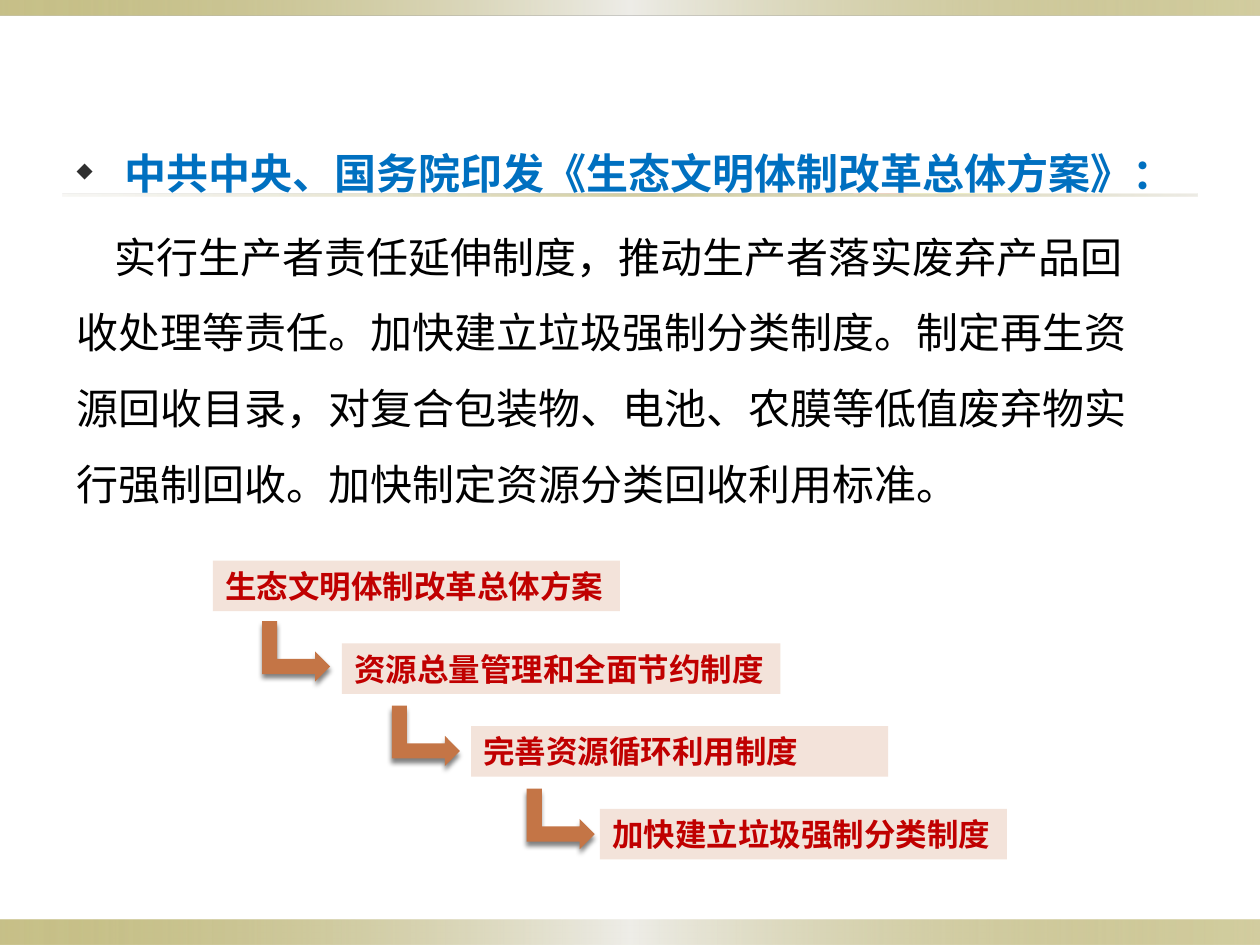
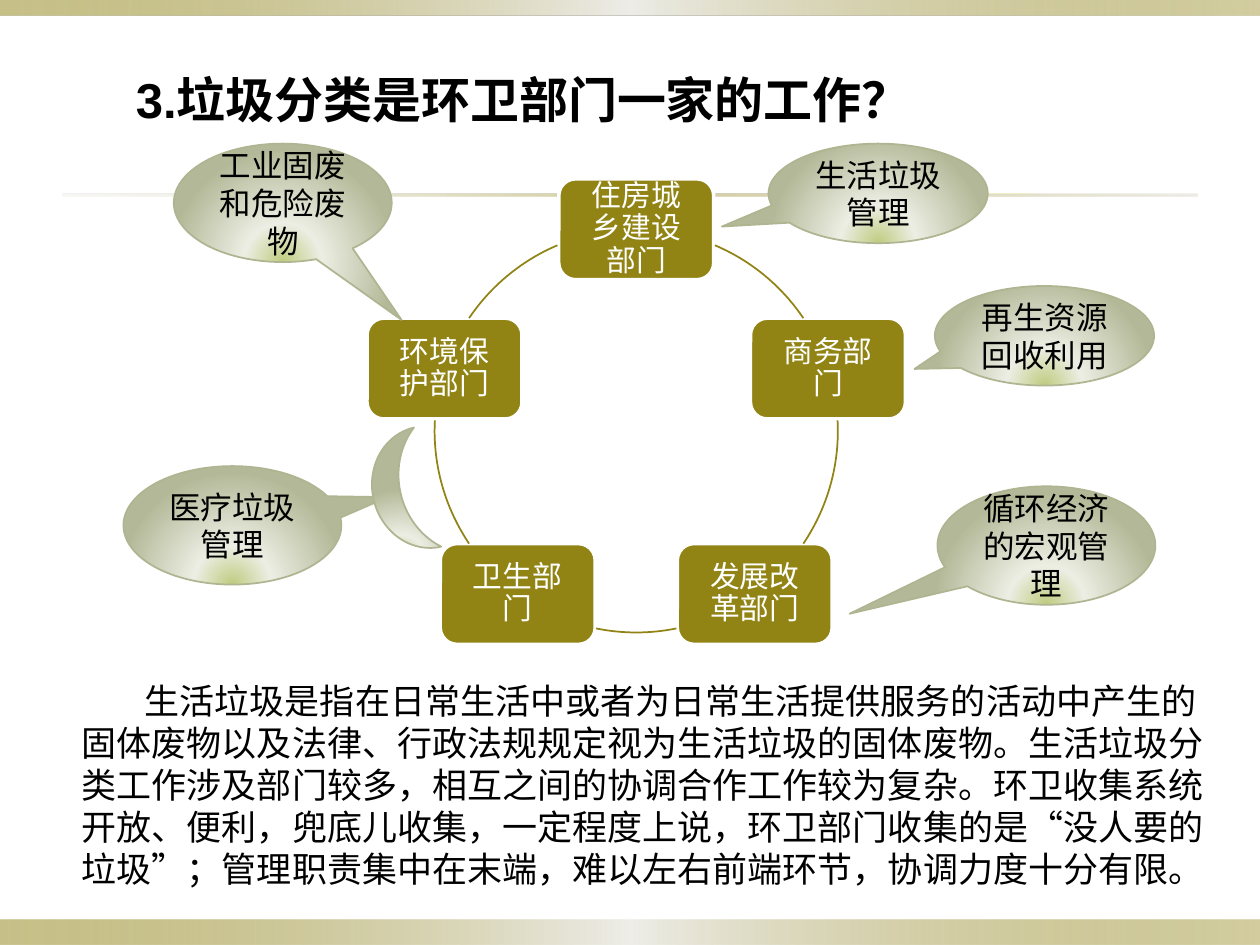
from math import cos, radians, sin

from lxml import etree
from pptx import Presentation
from pptx.dml.color import RGBColor
from pptx.enum.lang import MSO_LANGUAGE_ID
from pptx.enum.shapes import MSO_SHAPE
from pptx.enum.text import MSO_ANCHOR, PP_ALIGN
from pptx.oxml import parse_xml
from pptx.oxml.ns import nsdecls, qn
from pptx.util import Inches, Pt

OLIVE = RGBColor(0x91, 0x84, 0x15)
PALE_OLIVE = RGBColor(0xEE, 0xED, 0xE8)
SAND = RGBColor(0xDC, 0xD9, 0xCC)
SAGE = RGBColor(0xB3, 0xB9, 0x98)
SAGE_EDGE = RGBColor(0xAF, 0xB5, 0x91)
SAGE_LIGHT = RGBColor(0xEC, 0xEE, 0xE3)
LIME = RGBColor(0xBF, 0xCC, 0x80)
BLUE = RGBColor(0x00, 0x70, 0xC0)
RED = RGBColor(0xC0, 0x00, 0x00)
PEACH = RGBColor(0xF3, 0xE3, 0xDA)
COPPER = RGBColor(0xC4, 0x75, 0x46)
CHARCOAL = RGBColor(0x2F, 0x2F, 0x2F)
BLACK = RGBColor(0, 0, 0)
WHITE = RGBColor(0xFF, 0xFF, 0xFF)

LATO = "Lato"
ARIAL = "Arial"
NOTO = "Noto Sans CJK SC"

# Gradient stops: position %, colour, opacity %
BAND_STOPS = [(0, OLIVE, 50), (50, PALE_OLIVE, 100), (100, OLIVE, 40)]
RULE_STOPS = [(0, SAND, 20), (50, OLIVE, 40), (100, SAND, 50)]
BUBBLE_STOPS = [(0, LIME, 100), (31, SAGE_LIGHT, 100), (91, SAGE, 100)]
LINEAR = '<a:lin ang="0" scaled="0"/>'
GLOW_FROM_BELOW = ('<a:path path="circle">'
                   '<a:fillToRect l="50000" t="150000" r="50000"/></a:path>')


def write(paragraph, text, size=18, color=BLACK, bold=False, font=LATO,
          asian=LATO, align=PP_ALIGN.LEFT, spacing=1.0, before=0, indent=0, margin=0):
    """Fill a paragraph; indent and margin are in inches."""
    paragraph.alignment = align
    paragraph.line_spacing = spacing
    paragraph.space_before = Pt(before)
    properties = paragraph._p.get_or_add_pPr()
    properties.set("marL", str(Inches(margin)))
    properties.set("indent", str(Inches(indent)))
    run = paragraph.add_run()
    run.text = text
    run.font.size = Pt(size)
    run.font.bold = bold
    run.font.name = font
    run.font.color.rgb = color
    run.font.language_id = MSO_LANGUAGE_ID.SIMPLIFIED_CHINESE
    run.font._element.find(qn("a:latin")).addnext(
        parse_xml(f'<a:ea {nsdecls("a")} typeface="{asian}"/>'))


def add_bullet(paragraph):
    properties = paragraph._p.get_or_add_pPr()
    color = etree.SubElement(properties, qn("a:buClr"))
    etree.SubElement(color, qn("a:srgbClr"), val=str(CHARCOAL))
    etree.SubElement(properties, qn("a:buSzPct"), val="50000")
    etree.SubElement(properties, qn("a:buChar"), char="◆")


def fill_gradient(shape, stops, direction):
    stop_xml = "".join(
        f'<a:gs pos="{position * 1000}"><a:srgbClr val="{color}">'
        f'<a:alpha val="{opacity * 1000}"/></a:srgbClr></a:gs>'
        for position, color, opacity in stops)
    shape.fill.background()
    properties = shape._element.spPr
    properties.replace(properties.find(qn("a:noFill")), parse_xml(
        f'<a:gradFill {nsdecls("a")} rotWithShape="1"><a:gsLst>{stop_xml}</a:gsLst>'
        f'{direction}</a:gradFill>'))


class Deck:
    """Holds the presentation, the shared bands and the current slide."""

    def __init__(self):
        self.presentation = Presentation()
        self.presentation.slide_width = Inches(10)
        self.presentation.slide_height = Inches(7.5)
        self.slide = None

    def new_slide(self):
        self.slide = self.presentation.slides.add_slide(self.presentation.slide_layouts[6])
        for box, stops in (((0, 7.3, 10, 0.2), BAND_STOPS),
                           ((0, 0, 10, 0.12), BAND_STOPS),
                           ((0.5, 1.54, 9, 0.02), RULE_STOPS)):
            fill_gradient(self.shape(MSO_SHAPE.RECTANGLE, box), stops, LINEAR)

    def shape(self, kind, box, fill=None, line=None, line_width=1, adjustments=()):
        shape = self.slide.shapes.add_shape(kind, *map(Inches, box))
        shape.shadow.inherit = False
        for index, value in enumerate(adjustments):
            shape.adjustments[index] = value
        if fill is None:
            shape.fill.background()
        else:
            shape.fill.solid()
            shape.fill.fore_color.rgb = fill
        if line is None:
            shape.line.fill.background()
        else:
            shape.line.color.rgb = line
            shape.line.width = Pt(line_width)
        return shape

    def text_box(self, box):
        frame = self.slide.shapes.add_textbox(*map(Inches, box)).text_frame
        frame.word_wrap = True
        return frame

    def step(self, left, top, width, text):
        shape = self.shape(MSO_SHAPE.RECTANGLE, (left, top, width, 0.4), PEACH)
        shape.text_frame.vertical_anchor = MSO_ANCHOR.TOP
        write(shape.text_frame.paragraphs[0], text, color=RED, bold=True, font=NOTO)

    def step_arrow(self, left, top):
        arrow = self.shape(MSO_SHAPE.BENT_UP_ARROW, (left, top, 0.48, 0.54), COPPER)
        arrow.rotation = 90
        effects = arrow._element.spPr.find(qn("a:effectLst"))
        effects.append(parse_xml(
            f'<a:outerShdw {nsdecls("a")} blurRad="{Pt(2.8)}" dist="{Pt(2.5)}" '
            'dir="5400000" rotWithShape="0"><a:srgbClr val="000000">'
            '<a:alpha val="50000"/></a:srgbClr></a:outerShdw>'))

    def department(self, center_x, center_y, text):
        width, height = 1.23, 0.8
        box = (center_x - width / 2, center_y - height / 2, width, height)
        shape = self.shape(MSO_SHAPE.ROUNDED_RECTANGLE, box, OLIVE, WHITE, 2)
        frame = shape.text_frame
        frame.margin_left = frame.margin_right = Inches(0.11)
        frame.margin_top = frame.margin_bottom = Inches(0.11)
        write(frame.paragraphs[0], text, size=17, color=WHITE,
              align=PP_ALIGN.CENTER, spacing=0.9)

    def ring_arc(self, box, start, end):
        """Angles are clockwise degrees from three o'clock."""
        adjustments = [angle % 360 * 0.6 for angle in (start, end)]
        self.shape(MSO_SHAPE.ARC, box, line=OLIVE, adjustments=adjustments)

    def bubble(self, kind, box, adjustments=(), text=None):
        shape = self.shape(kind, box, line=SAGE_EDGE, adjustments=adjustments)
        fill_gradient(shape, BUBBLE_STOPS, GLOW_FROM_BELOW)
        if text:
            write(shape.text_frame.paragraphs[0], text, align=PP_ALIGN.CENTER)
        return shape


def build_reform_plan(deck):
    deck.new_slide()
    frame = deck.text_box((0.51, 0.92, 8.82, 3.62))
    heading = frame.paragraphs[0]
    add_bullet(heading)
    write(heading, "中共中央、国务院印发《生态文明体制改革总体方案》：", size=24, color=BLUE,
          bold=True, font=NOTO, spacing=1.5, indent=-0.38, margin=0.38)
    write(frame.add_paragraph(),
          "实行生产者责任延伸制度，推动生产者落实废弃产品回收处理等责任。加快建立垃圾强制分类制度。"
          "制定再生资源回收目录，对复合包装物、电池、农膜等低值废弃物实行强制回收。"
          "加快制定资源分类回收利用标准。",
          size=24, font=NOTO, spacing=1.5, before=4.8, indent=0.3)

    steps = [("生态文明体制改革总体方案", 3.23), ("资源总量管理和全面节约制度", 3.48),
             ("完善资源循环利用制度", 3.31), ("加快建立垃圾强制分类制度", 3.23)]
    for index, (text, width) in enumerate(steps):
        deck.step(1.69 + 1.024 * index, 4.45 + 0.657 * index, width, text)
    for left, top in ((2.11, 4.9), (3.14, 5.57), (4.21, 6.23)):
        deck.step_arrow(left, top)


def build_departments(deck):
    deck.new_slide()
    frame = deck.text_box((0.55, 5.34, 9.25, 1.9))
    write(frame.paragraphs[0],
          "生活垃圾是指在日常生活中或者为日常生活提供服务的活动中产生的固体废物以及法律、"
          "行政法规规定视为生活垃圾的固体废物。生活垃圾分类工作涉及部门较多，"
          "相互之间的协调合作工作较为复杂。环卫收集系统开放、便利，兜底儿收集，一定程度上说，"
          "环卫部门收集的是“没人要的垃圾”；管理职责集中在末端，难以左右前端环节，协调力度十分有限。",
          size=20, asian=NOTO, spacing=Pt(24), indent=0.5)

    center_x, center_y, radius = 5.05, 3.42, 1.6
    ring = (center_x - radius, center_y - radius, 2 * radius, 2 * radius)
    departments = ["住房城乡建设部门", "商务部门", "发展改革部门", "卫生部门", "环境保护部门"]
    for index, name in enumerate(departments):
        angle = radians(72 * index - 90)
        deck.department(center_x + radius * cos(angle), center_y + radius * sin(angle), name)
    for start, end in ((-67, -34), (-3, 34), (78.5, 101.5), (146, 183), (214, 247)):
        deck.ring_arc(ring, start, end)

    duties = [
        ("生活垃圾管理", (6.1, 1.14, 1.74, 0.79), (-0.713, 0.333)),
        ("再生资源回收利用", (7.42, 2.27, 1.74, 0.79), (-0.593, 0.333)),
        ("循环经济的宏观管理", (7.44, 3.86, 1.73, 0.94), (-0.903, 0.576)),
        ("工业固废和危险废物", (1.38, 1.14, 1.73, 0.94), (0.545, 0.989)),
        ("医疗垃圾管理", (0.98, 3.7, 1.73, 0.94), (0.713, -0.238)),
    ]
    for text, box, tail in duties:
        deck.bubble(MSO_SHAPE.OVAL_CALLOUT, box, tail, text)
    deck.bubble(MSO_SHAPE.MOON, (2.96, 3.43, 0.44, 0.97)).rotation = 347.1

    title = deck.text_box((0.98, 0.5, 7.64, 0.57))
    write(title.paragraphs[0], "3.垃圾分类是环卫部门一家的工作？", size=28, bold=True, font=ARIAL)


def main():
    deck = Deck()
    build_reform_plan(deck)
    build_departments(deck)
    deck.presentation.save("out.pptx")


if __name__ == "__main__":
    main()
